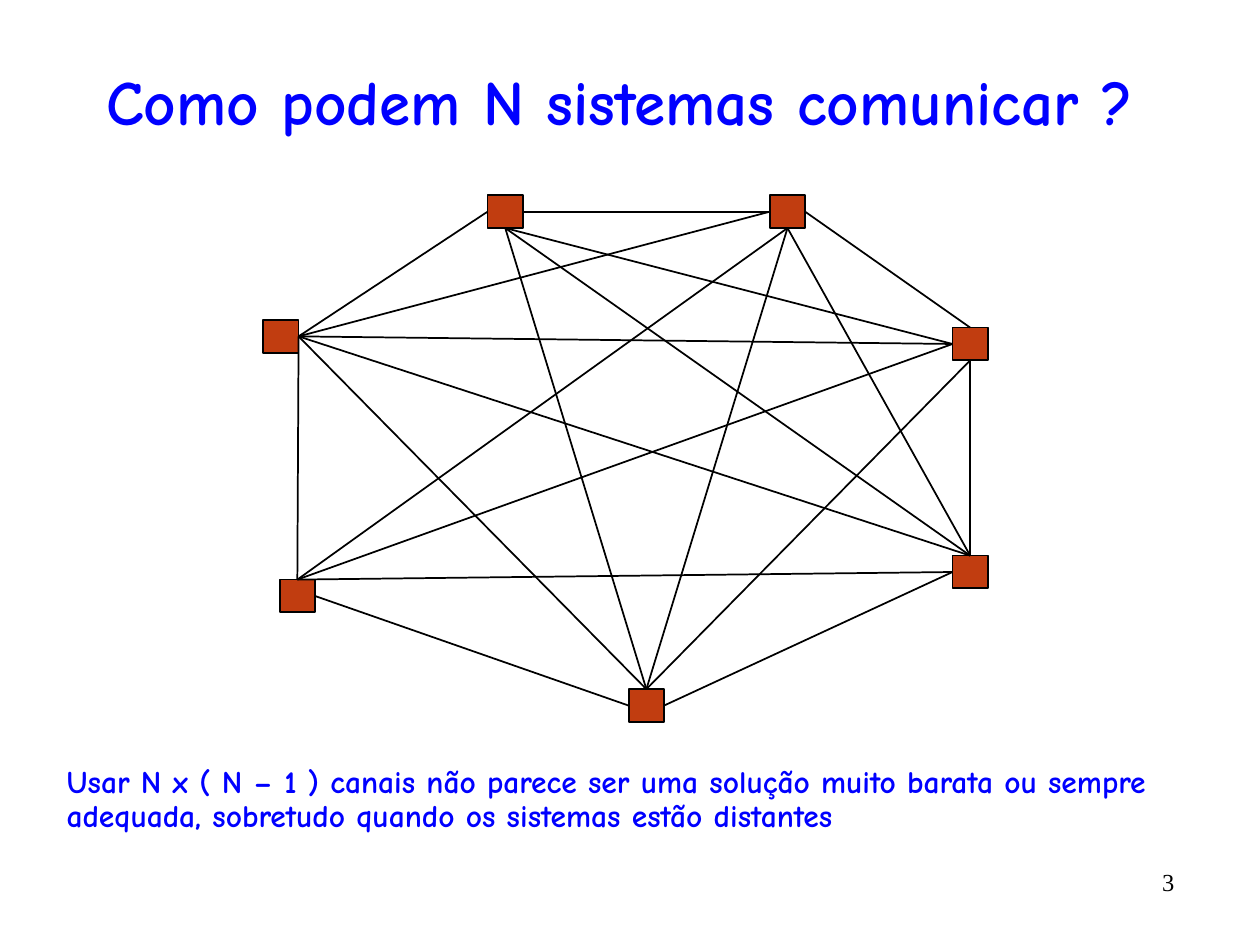
from itertools import starmap
from typing import NamedTuple

from pptx import Presentation
from pptx.dml.color import RGBColor
from pptx.enum.shapes import MSO_CONNECTOR, MSO_SHAPE
from pptx.enum.text import MSO_ANCHOR, PP_ALIGN
from pptx.oxml.ns import qn
from pptx.util import Inches, Pt

RECT, STRAIGHT = MSO_SHAPE.RECTANGLE, MSO_CONNECTOR.STRAIGHT
LEFT_ALIGN, CENTER, RIGHT_ALIGN = PP_ALIGN.LEFT, PP_ALIGN.CENTER, PP_ALIGN.RIGHT
MIDDLE = MSO_ANCHOR.MIDDLE
TOP, LEFT, BOTTOM, RIGHT = range(4)  # connection sites of a rectangle

BLUE, BLACK, RUST = "0000FF", "000000", "C13D10"
HEADING_FONT, NUMBER_FONT = "Comic Neue", "Times New Roman"
NODE_W, NODE_H = 0.28, 0.26


class Node(NamedTuple):
    name: str
    x: float
    y: float


class Channel(NamedTuple):
    start: str
    start_site: int
    end: str
    end_site: int


NODES = [
    Node("top left", 3.87, 1.55),
    Node("top right", 6.11, 1.55),
    Node("right upper", 7.56, 2.6),
    Node("right lower", 7.56, 4.41),
    Node("bottom", 4.99, 5.47),
    Node("left lower", 2.22, 4.6),
    Node("left upper", 2.09, 2.54),
]

# Every system is joined to every other one
CHANNELS = [
    Channel("left upper", RIGHT, "top left", LEFT),
    Channel("left upper", RIGHT, "top right", LEFT),
    Channel("left upper", RIGHT, "right upper", LEFT),
    Channel("left upper", RIGHT, "right lower", TOP),
    Channel("left upper", RIGHT, "bottom", TOP),
    Channel("left upper", RIGHT, "left lower", TOP),
    Channel("top left", RIGHT, "top right", LEFT),
    Channel("top left", BOTTOM, "right upper", LEFT),
    Channel("top left", BOTTOM, "right lower", TOP),
    Channel("top left", BOTTOM, "bottom", TOP),
    Channel("top left", BOTTOM, "left lower", TOP),
    Channel("top right", RIGHT, "right upper", TOP),
    Channel("top right", BOTTOM, "right lower", TOP),
    Channel("top right", BOTTOM, "bottom", TOP),
    Channel("top right", BOTTOM, "left lower", TOP),
    Channel("right upper", BOTTOM, "right lower", TOP),
    Channel("right upper", BOTTOM, "bottom", TOP),
    Channel("right upper", LEFT, "left lower", TOP),
    Channel("right lower", LEFT, "bottom", RIGHT),
    Channel("right lower", LEFT, "left lower", TOP),
    Channel("bottom", LEFT, "left lower", RIGHT),
]
# The left lower system has its own line to the top left one only through the others
CHANNELS.remove(Channel("top left", BOTTOM, "left lower", TOP))


def color(value: str) -> RGBColor:
    return RGBColor.from_string(value)


def set_line(line) -> None:
    line.color.rgb = color(BLACK)
    line.width = Pt(1)


def write(shape, text: str, font: str, size: int, ink: str, bold: bool, align):
    tf = shape.text_frame
    tf.word_wrap = True
    p = tf.paragraphs[0]
    p.text = text
    p.alignment = align
    p.font.name, p.font.size, p.font.bold = font, Pt(size), bold
    p.font.color.rgb = color(ink)
    return p


def add_node(s, node: Node):
    sp = s.shapes.add_shape(RECT, *map(Inches, (node.x, node.y, NODE_W, NODE_H)))
    sp.shadow.inherit = False
    sp.fill.solid()
    sp.fill.fore_color.rgb = color(RUST)
    set_line(sp.line)
    return sp


def add_channel(s, nodes: dict, channel: Channel) -> None:
    line = s.shapes.add_connector(STRAIGHT, 0, 0, 0, 0)
    line.begin_connect(nodes[channel.start], channel.start_site)
    line.end_connect(nodes[channel.end], channel.end_site)
    set_line(line.line)
    sp_pr = line._element.spPr
    sp_pr.append(sp_pr.makeelement(qn("a:effectLst"), {}))


def main() -> None:
    prs = Presentation()
    prs.slide_width, prs.slide_height = Inches(10), Inches(7.5)
    s = prs.slides.add_slide(prs.slide_layouts[5])

    # Title
    title = s.shapes.title
    title.left, title.top, title.width, title.height = map(Inches, (0.33, 0.42, 9.17, 0.75))
    title.text_frame.vertical_anchor = MIDDLE
    write(title, "Como podem N sistemas comunicar ?", HEADING_FONT, 36, BLUE, True, CENTER)

    # Mesh of systems and channels
    nodes = {node.name: add_node(s, node) for node in NODES}
    for channel in CHANNELS:
        add_channel(s, nodes, channel)

    # Conclusion
    note = s.shapes.add_textbox(*map(Inches, (0.43, 6.03, 9.42, 1.02)))
    p = write(note, "Usar N x ( N – 1 ) canais não parece ser uma solução muito barata ou "
              "sempre adequada, sobretudo quando os sistemas estão distantes",
              HEADING_FONT, 18, BLUE, True, LEFT_ALIGN)
    p.line_spacing = 0.9

    # Slide number
    number = s.shapes.add_textbox(*map(Inches, (8.42, 6.83, 1, 0.42)))
    write(number, "3", NUMBER_FONT, 14, BLACK, False, RIGHT_ALIGN)

    prs.save("out.pptx")


if __name__ == "__main__":
    main()
